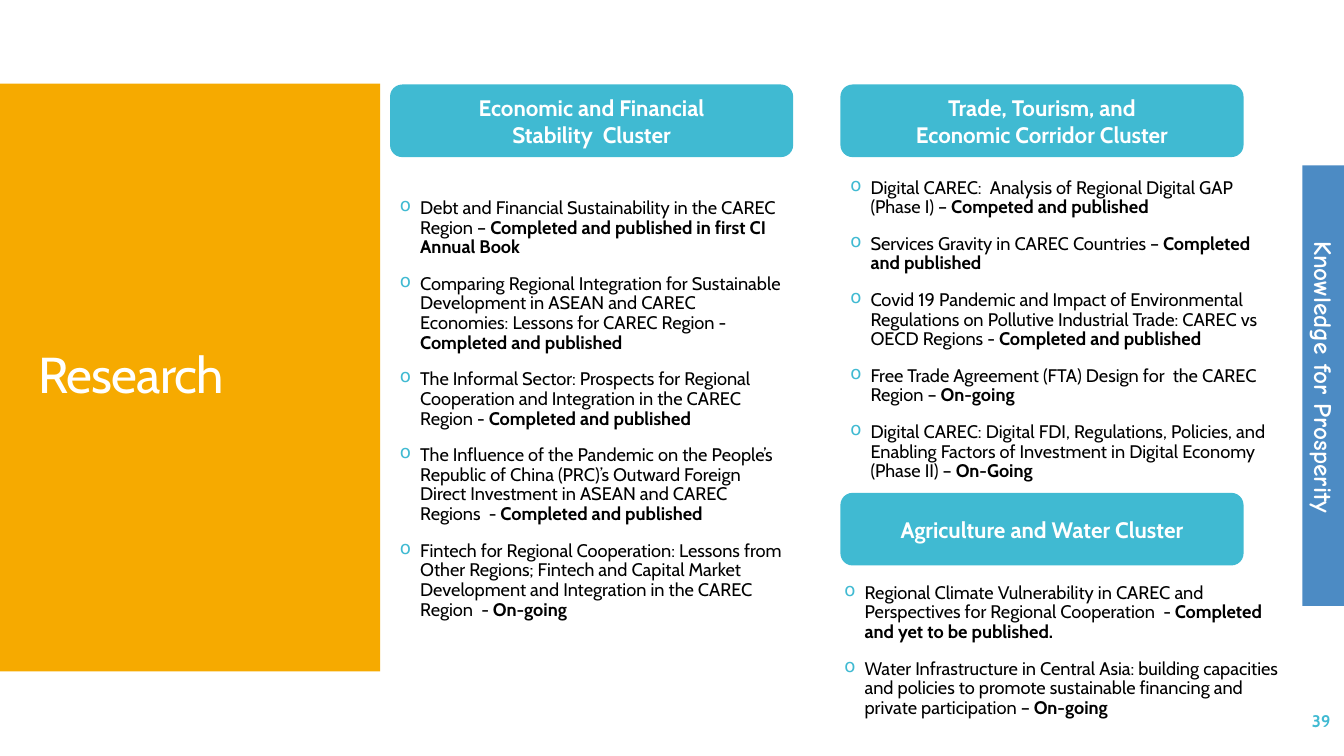
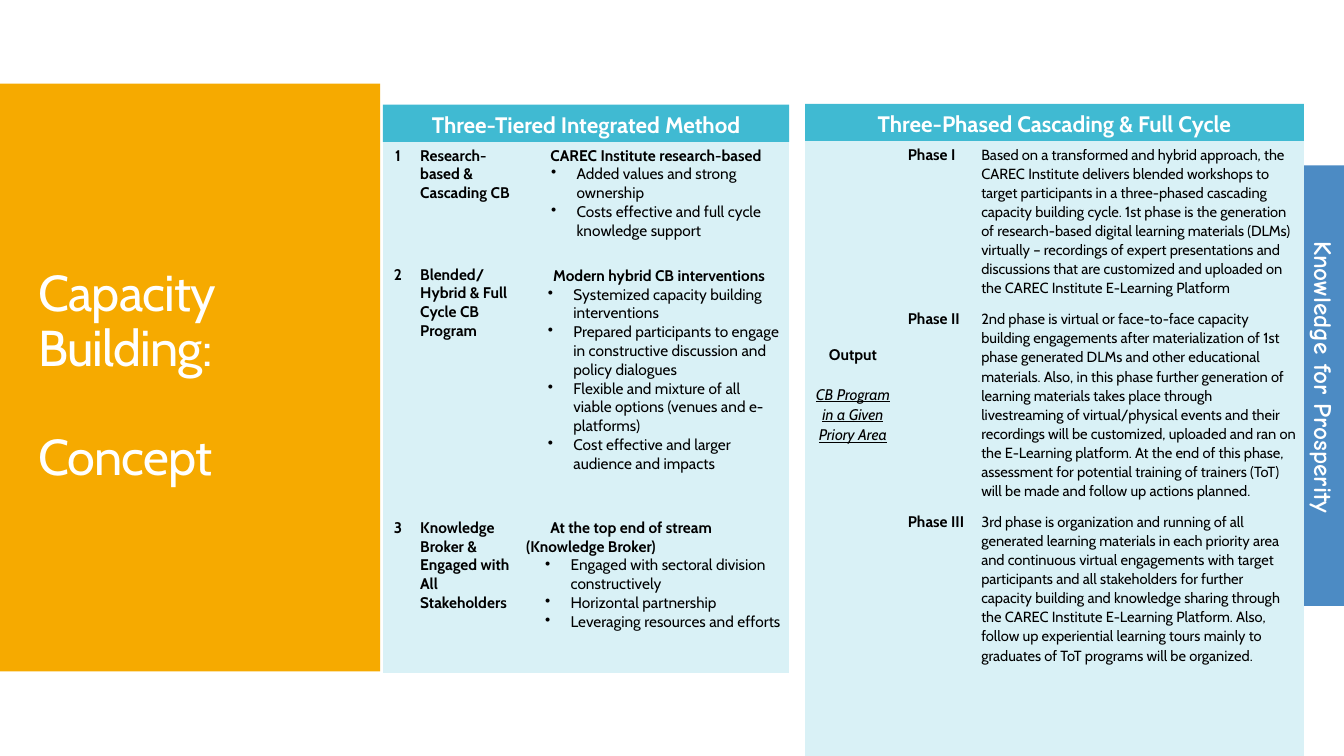
from dataclasses import dataclass

from lxml import etree
from pptx import Presentation
from pptx import util as u
from pptx.dml.color import RGBColor
from pptx.enum import shapes, text
from pptx.oxml.ns import qn

LEFT, CENTER, RIGHT = text.PP_ALIGN.LEFT, text.PP_ALIGN.CENTER, text.PP_ALIGN.RIGHT
TOP, MIDDLE, BOTTOM = text.MSO_ANCHOR.TOP, text.MSO_ANCHOR.MIDDLE, text.MSO_ANCHOR.BOTTOM


@dataclass(frozen=True)
class Theme:
    """Colours, fonts and type sizes in points."""
    orange: str = "F6AA00"
    blue: str = "005BAB"
    teal: str = "40BAD2"
    pale: str = "D9F1F6"
    white: str = "FFFFFF"
    black: str = "000000"
    font: str = "Cabin"
    motto_font: str = "Comic Neue"
    title_size: float = 36
    motto_size: float = 18
    header_size: float = 16
    list_size: float = 13
    number_size: float = 12
    table_size: float = 11
    detail_size: float = 10.5


THEME = Theme()
HEADER = dict(size=THEME.header_size, color=THEME.white, bold=True)
LABEL = dict(size=THEME.table_size, bold=True)
NO_GRID_STYLE = "{2D5ABB26-0587-4C30-8999-92F81FD0307C}"

# Content; all positions are left, top, width, height in cm
MOTTO = "Knowledge for Prosperity"
PAGE_NUMBER = "39"
RESEARCH_TITLE = ["Research"]
CONCEPT_TITLE = ["Capacity Building:", "Concept"]

CLUSTERS = [
    dict(lines=["Economic and Financial", "Stability  Cluster"], at=(9.83, 2.13),
         list_box=(9.83, 4.88, 10.16, 11.3), items=[
        ("Debt and Financial Sustainability in the CAREC Region – ",
         "Completed and published in first CI Annual Book"),
        ("Comparing Regional Integration for Sustainable Development in ASEAN and CAREC "
         "Economies: Lessons for CAREC Region - ", "Completed and published"),
        ("The Informal Sector: Prospects for Regional Cooperation and Integration in the "
         "CAREC Region - ", "Completed and published"),
        ("The Influence of the Pandemic on the People’s Republic of China (PRC)’s Outward "
         "Foreign Direct Investment in ASEAN and CAREC Regions  - ", "Completed and published"),
        ("Fintech for Regional Cooperation: Lessons from Other Regions; Fintech and Capital "
         "Market Development and Integration in the CAREC Region  - ", "On-going"),
    ]),
    dict(lines=["Trade, Tourism, and", "Economic Corridor Cluster"], at=(21.18, 2.13),
         list_box=(21.18, 4.37, 11.3, 7.87), items=[
        ("Digital CAREC:  Analysis of Regional Digital GAP (Phase I) – ",
         "Competed and published"),
        ("Services Gravity in CAREC Countries – ", "Completed and published"),
        ("Covid 19 Pandemic and Impact of Environmental Regulations on Pollutive Industrial "
         "Trade: CAREC vs OECD Regions - ", "Completed and published"),
        ("Free Trade Agreement (FTA) Design for  the CAREC Region – ", "On-going"),
        ("Digital CAREC: Digital FDI, Regulations, Policies, and Enabling Factors of "
         "Investment in Digital Economy  (Phase II) – ", "On-Going"),
    ]),
    dict(lines=["Agriculture and Water Cluster"], at=(21.18, 12.42),
         list_box=(21.03, 14.58, 11.46, 4.4), items=[
        ("Regional Climate Vulnerability in CAREC and Perspectives for Regional "
         "Cooperation  - ", "Completed and yet to be published."),
        ("Water Infrastructure in Central Asia: building capacities and policies to promote "
         "sustainable financing and private participation – ", "On-going"),
    ]),
]

METHOD = dict(header="Three-Tiered Integrated Method", at=(9.65, 2.64), spacing=0.9,
              columns=[0.76, 2.67, 6.81], rows=[3, 6.38, 3.99])
TIERS = [
    dict(name=["Research-based & Cascading CB"], lead="CAREC Institute research-based",
         hang=1.27, inset=(0.18, 0.1),
         points=["Added values and strong ownership",
                 "Costs effective and full cycle knowledge support"]),
    dict(name=["Blended/", "Hybrid & Full Cycle CB Program"],
         lead="Modern hybrid CB interventions", hang=1.12, inset=(0.25, 0.13),
         points=["Systemized capacity building interventions",
                 "Prepared participants to engage in constructive discussion and policy dialogues",
                 "Flexible and mixture of all viable options (venues and e-platforms)",
                 "Cost effective and larger audience and impacts"]),
    dict(name=["Knowledge Broker & Engaged with All Stakeholders"],
         lead="At the top end of stream (Knowledge Broker)", hang=1.12, inset=(0.18, 0.1),
         points=["Engaged with sectoral division constructively", "Horizontal partnership",
                 "Leveraging resources and efforts"]),
]

CYCLE = dict(header="Three-Phased Cascading & Full Cycle", at=(20.29, 2.62), spacing=1.07,
             columns=[2.41, 1.85, 8.31], rows=[4.14, 5.11, 6.24])
OUTPUT = ("Output", "CB Program in a Given Priory Area")
PHASES = [
    ("Phase I",
     "Based on a transformed and hybrid approach, the CAREC Institute delivers blended "
     "workshops to target participants in a three-phased cascading capacity building cycle. "
     "1st phase is the generation of research-based digital learning materials (DLMs) "
     "virtually – recordings of expert presentations and discussions that are customized and "
     "uploaded on the CAREC Institute E-Learning Platform"),
    ("Phase II",
     "2nd phase is virtual or face-to-face capacity building engagements after "
     "materialization of 1st phase generated DLMs and other educational materials. Also, in "
     "this phase further generation of learning materials takes place through livestreaming "
     "of virtual/physical events and their recordings will be customized, uploaded and ran on "
     "the E-Learning platform. At the end of this phase, assessment for potential training of "
     "trainers (ToT) will be made and follow up actions planned."),
    ("Phase III",
     "3rd phase is organization and running of all generated learning materials in each "
     "priority area and continuous virtual engagements with target participants and all "
     "stakeholders for further capacity building and knowledge sharing through the CAREC "
     "Institute E-Learning Platform. Also, follow up experiential learning tours mainly to "
     "graduates of ToT programs will be organized."),
]


# Formatting helpers
def assign(target, **values):
    for name, value in values.items():
        setattr(target, name, value)


def place(box):
    return [u.Cm(length) for length in box]


def write(frame, paragraphs):
    """Each paragraph is (runs, paragraph format); each run is (words, font format)."""
    for index, (runs, layout) in enumerate(paragraphs):
        paragraph = frame.paragraphs[0] if index == 0 else frame.add_paragraph()
        layout = dict(layout)
        bullet, bullet_color = layout.pop("bullet", None), layout.pop("bullet_color", None)
        margin, indent = layout.pop("margin", 0), layout.pop("indent", 0)
        if index == 0:
            layout.pop("space_before", None)
        properties = paragraph._p.get_or_add_pPr()
        if margin or indent:
            properties.set("marL", str(u.Cm(margin)))
            properties.set("indent", str(u.Cm(indent)))
        if bullet_color:
            color = etree.SubElement(properties, qn("a:buClr"))
            etree.SubElement(color, qn("a:srgbClr"), val=bullet_color)
        if bullet:
            etree.SubElement(properties, qn("a:buChar"), char=bullet)
        assign(paragraph, **layout)
        for words, style in runs:
            style = {"name": THEME.font, **style, "size": u.Pt(style["size"])}
            color = style.pop("color", THEME.black)
            spacing = style.pop("spacing", None)
            run = paragraph.add_run()
            run.text = words
            assign(run.font, **style)
            run.font.color.rgb = RGBColor.from_string(color)
            if spacing:
                run._r.get_or_add_rPr().set("spc", str(spacing))


def add_block(slide, kind, box, color):
    shape = slide.shapes.add_shape(kind, *place(box))
    shape.shadow.inherit = False
    shape.fill.solid()
    shape.fill.fore_color.rgb = RGBColor.from_string(color)
    shape.line.fill.background()
    return shape


def add_text(slide, box, paragraphs, **frame_format):
    shape = slide.shapes.add_textbox(*place(box))
    assign(shape.text_frame, **{"word_wrap": True, **frame_format})
    write(shape.text_frame, paragraphs)
    return shape


# Slide frame: title panel, side band, motto
def add_slide(presentation, title_lines):
    slide = presentation.slides.add_slide(presentation.slide_layouts[5])
    rectangle = shapes.MSO_SHAPE.RECTANGLE
    add_block(slide, rectangle, (0, 2.11, 9.58, 14.81), THEME.orange)
    band = add_block(slide, rectangle, (32.82, 4.17, 1.05, 11.1), THEME.blue)
    color = next(band._element.spPr.iter(qn("a:srgbClr")))
    etree.SubElement(color, qn("a:alpha"), val="70000")
    motto_style = dict(name=THEME.motto_font, size=THEME.motto_size, color=THEME.white,
                       bold=True)
    motto = add_text(slide, (29.67, 8.99, 7.39, 1.02),
                     [([(MOTTO, motto_style)], dict(alignment=CENTER))], word_wrap=False)
    motto.rotation = 90

    title = slide.shapes.title
    left, top, width, height = place((0.71, 3.12, 8.18, 12.78))
    assign(title, left=left, top=top, width=width, height=height)
    assign(title.text_frame, word_wrap=True, vertical_anchor=MIDDLE,
           auto_size=text.MSO_AUTO_SIZE.NONE)
    style = dict(size=THEME.title_size, color=THEME.white, spacing=-60)
    layout = dict(alignment=LEFT, line_spacing=0.9, space_before=u.Pt(39))
    write(title.text_frame, [([(line, style)], layout) for line in title_lines])
    # The title goes in front of its panel
    title._element.getparent().append(title._element)
    return slide


def add_cluster(slide, cluster):
    heading = add_block(slide, shapes.MSO_SHAPE.ROUNDED_RECTANGLE,
                        (*cluster["at"], 10.16, 1.83), THEME.teal)
    assign(heading.text_frame, word_wrap=True, vertical_anchor=MIDDLE)
    write(heading.text_frame,
          [([(line, HEADER)], dict(alignment=CENTER)) for line in cluster["lines"]])
    layout = dict(margin=0.51, indent=-0.51, bullet="o", bullet_color=THEME.teal,
                  line_spacing=0.9, space_before=u.Pt(12))
    style = dict(size=THEME.list_size)
    add_text(slide, cluster["list_box"],
             [([(topic, style), (status, dict(style, bold=True))], layout)
              for topic, status in cluster["items"]])


# Table with its header bar on top
def add_panel(slide, panel):
    left, top = panel["at"]
    width, bar = sum(panel["columns"]), 0.94
    header = add_block(slide, shapes.MSO_SHAPE.RECTANGLE, (left, top, width, bar), THEME.teal)
    assign(header.text_frame, word_wrap=True, vertical_anchor=BOTTOM,
           margin_top=u.Cm(0.1), margin_bottom=u.Cm(0.1))
    write(header.text_frame, [([(panel["header"], HEADER)],
                               dict(alignment=CENTER, line_spacing=panel["spacing"]))])
    box = (left, top + bar, width, sum(panel["rows"]))
    graphic = slide.shapes.add_table(len(panel["rows"]), len(panel["columns"]), *place(box))
    next(graphic._element.iter(qn("a:tableStyleId"))).text = NO_GRID_STYLE
    table = graphic.table
    assign(table, first_row=False, horz_banding=False)
    for column, size in zip(table.columns, panel["columns"]):
        column.width = u.Cm(size)
    for row, size in zip(table.rows, panel["rows"]):
        row.height = u.Cm(size)
    return table


def fill_cell(cell, paragraphs, inset=(0.18, 0.1), top=None):
    side, edge = map(u.Cm, inset)
    assign(cell, margin_left=side, margin_right=side, margin_bottom=edge,
           margin_top=edge if top is None else u.Cm(top), vertical_anchor=TOP)
    cell.fill.solid()
    cell.fill.fore_color.rgb = RGBColor.from_string(THEME.pale)
    write(cell.text_frame, paragraphs)


def fill_tiers(table):
    point_style = dict(size=THEME.table_size)
    for index, tier in enumerate(TIERS):
        fill_cell(table.cell(index, 0), [([(str(index + 1), LABEL)], dict(alignment=CENTER))])
        fill_cell(table.cell(index, 1), [([(line, LABEL)], {}) for line in tier["name"]])
        hanging = dict(margin=tier["hang"], indent=-0.64, bullet="•")
        fill_cell(table.cell(index, 2),
                  [([(tier["lead"], LABEL)], dict(indent=0.61))]
                  + [([(point, point_style)], hanging) for point in tier["points"]],
                  tier["inset"])


def fill_phases(table):
    table.cell(0, 0).merge(table.cell(len(PHASES) - 1, 0))
    centered = dict(alignment=CENTER, line_spacing=1.07, space_before=u.Pt(14))
    name, program = OUTPUT
    program_style = dict(size=THEME.table_size, italic=True, underline=True)
    fill_cell(table.cell(0, 0), [([(name, LABEL)], centered),
                                 ([(program, program_style)], centered)], top=5.11)
    for index, (phase, detail) in enumerate(PHASES):
        fill_cell(table.cell(index, 1), [([(phase, LABEL)], {})])
        fill_cell(table.cell(index, 2), [([(detail, dict(size=THEME.detail_size))],
                                          dict(line_spacing=1.07))])


def main():
    presentation = Presentation()
    assign(presentation, slide_width=u.Cm(33.87), slide_height=u.Cm(19.05))

    # Research clusters
    slide = add_slide(presentation, RESEARCH_TITLE)
    for cluster in CLUSTERS:
        add_cluster(slide, cluster)
    number_style = dict(size=THEME.number_size, color=THEME.teal, bold=True)
    add_text(slide, (29.54, 17.65, 4.24, 1.02),
             [([(PAGE_NUMBER, number_style)], dict(alignment=RIGHT))], vertical_anchor=MIDDLE)

    # Capacity building concept
    slide = add_slide(presentation, CONCEPT_TITLE)
    fill_tiers(add_panel(slide, METHOD))
    fill_phases(add_panel(slide, CYCLE))
    presentation.save("out.pptx")


if __name__ == "__main__":
    main()
